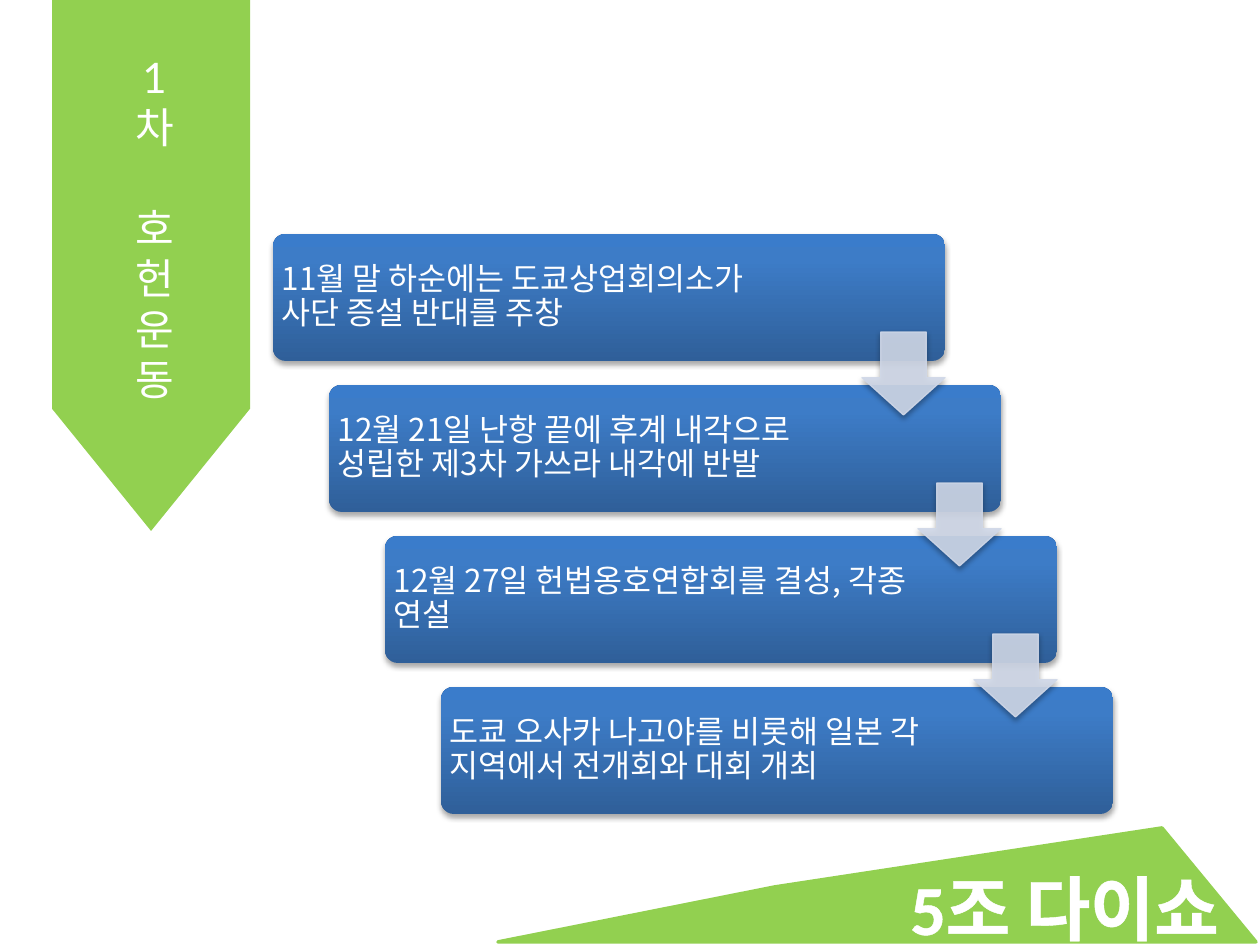
"""Builds a slide with four cascading steps of the first constitutional movement."""
from lxml import etree
from pptx import Presentation
from pptx.dml.color import RGBColor
from pptx.enum.shapes import MSO_SHAPE
from pptx.enum.text import MSO_ANCHOR, MSO_AUTO_SIZE, PP_ALIGN
from pptx.oxml import parse_xml
from pptx.oxml.ns import nsdecls, qn
from pptx.util import Emu, Pt

TITLE = ["1차", "호헌운동"]
STEPS = [
    "11월 말 하순에는 도쿄상업회의소가 사단 증설 반대를 주창",
    "12월 21일 난항 끝에 후계 내각으로 성립한 제3차 가쓰라 내각에 반발",
    "12월 27일 헌법옹호연합회를 결성, 각종 연설",
    "도쿄 오사카 나고야를 비롯해 일본 각 지역에서 전개회와 대회 개최",
]
FOOTER = "5조 다이쇼"
CORNER = [(775, 887), (1162, 828), (1256, 942), (498, 942)]

GREEN = RGBColor(0x92, 0xD0, 0x50)
WHITE = RGBColor(0xFF, 0xFF, 0xFF)
PALE = RGBColor(0xD0, 0xD8, 0xE8)
CARD_STOPS = [
    (0, RGBColor(0x2F, 0x5F, 0x99)),
    (80, RGBColor(0x3D, 0x7C, 0xC7)),
    (100, RGBColor(0x3A, 0x7C, 0xCB)),
]
PENTAGON, ROUNDED, DOWN = MSO_SHAPE.PENTAGON, MSO_SHAPE.ROUNDED_RECTANGLE, MSO_SHAPE.DOWN_ARROW
LEFT, CENTER = PP_ALIGN.LEFT, PP_ALIGN.CENTER
TOP, MIDDLE = MSO_ANCHOR.TOP, MSO_ANCHOR.MIDDLE
NO_FIT = MSO_AUTO_SIZE.NONE

SCALE = 914400 / 126
CARD_X, CARD_Y, CARD_W, CARD_H = 273, 234, 672, 127
STEP_X, STEP_Y = 56, 151
ARROW, ARROW_DROP = 83, 98


def px(n):
    return Emu(round(n * SCALE))


def box(*lengths):
    return [px(n) for n in lengths]


def write(sp, lines, font, size, align=CENTER, anchor=TOP, insets=(13, 6, 13, 6),
          bold=False, spacing=1.0, gap=0):
    tf = sp.text_frame
    tf.word_wrap, tf.auto_size, tf.vertical_anchor = True, NO_FIT, anchor
    tf.margin_left, tf.margin_top, tf.margin_right, tf.margin_bottom = box(*insets)
    for i, text in enumerate(lines):
        p = tf.add_paragraph() if i else tf.paragraphs[0]
        p.alignment, p.line_spacing = align, spacing
        p.space_before = Pt(gap if i else 0)
        r = p.add_run()
        r.text = text
        r.font.name, r.font.size, r.font.bold = font, Pt(size), bold
        r.font.color.rgb = WHITE
        etree.SubElement(r.font._element, qn("a:ea")).set("typeface", font)


def add_preset(s, kind, bounds, adjustments):
    sp = s.shapes.add_shape(kind, *box(*bounds))
    for i, value in enumerate(adjustments):
        sp.adjustments[i] = value
    sp.shadow.inherit = False
    sp.line.fill.background()
    return sp


def fill_green(sp):
    sp.fill.solid()
    sp.fill.fore_color.rgb = GREEN


def add_shadow(sp):
    effects = sp._element.spPr.find(qn("a:effectLst"))
    effects.append(parse_xml(
        f'<a:outerShdw {nsdecls("a")} blurRad="40000" dist="23000" dir="5400000" '
        'rotWithShape="0"><a:srgbClr val="000000"><a:alpha val="35000"/>'
        '</a:srgbClr></a:outerShdw>'))


def fill_gradient(sp):
    sp.fill.gradient()
    grad = sp._element.spPr.find(qn("a:gradFill"))
    stops = "".join(f'<a:gs pos="{pos * 1000}"><a:srgbClr val="{color}"/></a:gs>'
                    for pos, color in CARD_STOPS)
    grad.replace(grad.find(qn("a:gsLst")),
                 parse_xml(f'<a:gsLst {nsdecls("a")}>{stops}</a:gsLst>'))
    grad.find(qn("a:lin")).set("ang", "16200000")


def add_card(s, i, text):
    bounds = (CARD_X + i * STEP_X, CARD_Y + i * STEP_Y, CARD_W, CARD_H)
    sp = add_preset(s, ROUNDED, bounds, [0.1])
    fill_gradient(sp)
    add_shadow(sp)
    write(sp, [text], "Noto Sans CJK KR", 18, align=LEFT, anchor=MIDDLE,
          insets=(5, 5, 146, 5), spacing=0.9)


def add_arrow(s, i):
    x = CARD_X + CARD_W - ARROW + i * STEP_X
    y = CARD_Y + ARROW_DROP + i * STEP_Y
    sp = add_preset(s, DOWN, (x, y, ARROW, ARROW), [0.55, 0.45])
    sp.line.width = Pt(0.75)
    for fill in (sp.fill, sp.line.fill):
        fill.solid()
        fill.fore_color.rgb = PALE
    for color in sp._element.spPr.iter(qn("a:srgbClr")):
        etree.SubElement(color, qn("a:alpha")).set("val", "90000")
    add_shadow(sp)


def add_footer(s):
    builder = s.shapes.build_freeform(*CORNER[0], scale=SCALE)
    builder.add_line_segments(CORNER[1:], close=True)
    sp = builder.convert_to_shape()
    sp.shadow.inherit = False
    fill_green(sp)
    sp.line.color.rgb, sp.line.width = GREEN, Pt(2)
    sp = s.shapes.add_textbox(*box(871, 859, 387, 97))
    write(sp, [FOOTER], "Calibri", 40, bold=True)
    r = sp.text_frame.paragraphs[0].runs[0]
    r.font._element.insert(0, parse_xml(
        f'<a:ln {nsdecls("a")} w="18415"><a:solidFill><a:srgbClr val="{WHITE}"/>'
        '</a:solidFill></a:ln>'))


def main():
    prs = Presentation()
    prs.slide_width, prs.slide_height = box(1260, 945)
    s = prs.slides.add_slide(prs.slide_layouts[5])
    ribbon = add_preset(s, PENTAGON, (-115, 166, 532, 198), [0.617])
    ribbon.rotation = 90
    fill_green(ribbon)
    add_footer(s)
    for i, text in enumerate(STEPS):
        add_card(s, i, text)
    for i in range(len(STEPS) - 1):
        add_arrow(s, i)
    title = s.shapes.title
    title.left, title.top, title.width, title.height = box(115, 45, 79, 407)
    write(title, TITLE, "Lato", 24, gap=29)
    s.shapes._spTree.append(title._element)
    prs.save("out.pptx")


if __name__ == "__main__":
    main()
